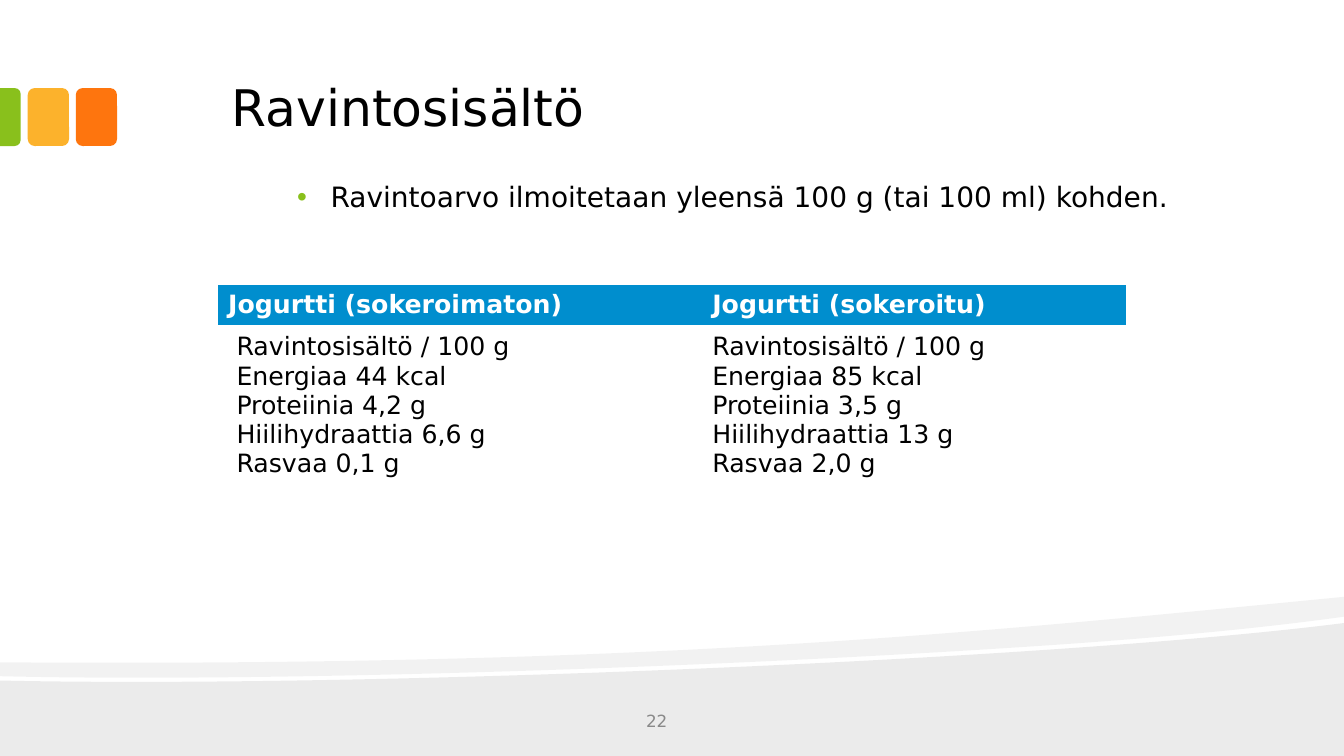
import dataclasses

import lxml.etree
import pptx
import pptx.dml.color
import pptx.enum.shapes
import pptx.enum.text
import pptx.oxml.ns
import pptx.util

Cm = pptx.util.Cm
Pt = pptx.util.Pt
Shape = pptx.enum.shapes.MSO_SHAPE
Align = pptx.enum.text.PP_ALIGN
Anchor = pptx.enum.text.MSO_ANCHOR
qn = pptx.oxml.ns.qn


@dataclasses.dataclass(frozen=True)
class Theme:
    font: str = "DejaVu Sans"
    black: str = "000000"
    white: str = "FFFFFF"
    gray: str = "898989"
    blue: str = "008ECE"
    green: str = "89C01C"
    yellow: str = "FCB22C"
    orange: str = "FE750E"
    title: int = 36
    body: int = 20
    cell: int = 18
    foot: int = 12


def rgb(color):
    return pptx.dml.color.RGBColor.from_string(color)


def add(parent, tag, **attrs):
    return lxml.etree.SubElement(parent, qn(tag), attrs)


def write(frame, text, font, size, color, bold=False, align=Align.LEFT,
          bullet=None, left=0, hang=0, space=None):
    para = frame.paragraphs[0]
    para.text = text
    para.alignment = align
    para.line_spacing = space
    if bullet:
        props = para._p.get_or_add_pPr()
        props.set("marL", str(Cm(left)))
        props.set("indent", str(Cm(-hang)))
        add(add(props, "a:buClr"), "a:srgbClr", val=bullet)
        add(props, "a:buFont", typeface="Arial")
        add(props, "a:buChar", char="•")
    for run in para.runs:
        run.font.name = font
        run.font.size = Pt(size)
        run.font.bold = bold
        run.font.color.rgb = rgb(color)


def bend(lines):
    cubic = lxml.etree.Element(qn("a:cubicBezTo"))
    lines[0].addprevious(cubic)
    for line in lines:
        cubic.append(line[0])
        line.getparent().remove(line)


class Page:
    def __init__(self, deck, theme):
        self.theme = theme
        self.slide = deck.slides.add_slide(deck.slide_layouts[6])
        self.shapes = self.slide.shapes

    def paint(self, shape, color, alpha=None):
        shape.shadow.inherit = False
        shape.line.fill.background()
        shape.fill.solid()
        shape.fill.fore_color.rgb = rgb(color)
        if alpha:
            tint = shape._element.spPr.find(qn("a:solidFill"))[0]
            add(tint, "a:alpha", val=str(alpha * 1000))

    def band(self, start, parts, alpha):
        pen = self.shapes.build_freeform(*map(Cm, start))
        for part in parts:
            pen.add_line_segments([tuple(map(Cm, spot)) for spot in part], close=False)
        pen.add_line_segments([tuple(map(Cm, start))], close=True)
        shape = pen.convert_to_shape()
        lines = list(shape._element.iter(qn("a:lnTo")))
        for part in parts:
            if len(part) == 3:
                bend(lines[:3])
            lines = lines[len(part):]
        self.paint(shape, self.theme.black, alpha)

    def block(self, kind, box, color, turn=0, curves=()):
        shape = self.shapes.add_shape(kind, *map(Cm, box))
        shape.rotation = turn
        for spot, value in enumerate(curves):
            shape.adjustments[spot] = value
        self.paint(shape, color)

    def text(self, box, text, size, color, anchor=Anchor.TOP, **style):
        frame = self.shapes.add_textbox(*map(Cm, box)).text_frame
        frame.word_wrap = True
        frame.vertical_anchor = anchor
        frame.margin_left = frame.margin_right = Cm(0.34)
        frame.margin_top = frame.margin_bottom = Cm(0.17)
        write(frame, text, self.theme.font, size, color, **style)

    def table(self, box, cols, rows, cells, pads):
        theme = self.theme
        grid = self.shapes.add_table(len(rows), len(cols), *map(Cm, box)).table
        grid.horz_banding = False
        style = grid._tbl.tblPr.find(qn("a:tableStyleId"))
        style.text = "{2D5ABB26-0587-4C30-8999-92F81FD0307C}"
        for col, width in zip(grid.columns, cols):
            col.width = Cm(width)
        for y, height in enumerate(rows):
            grid.rows[y].height = Cm(height)
            head = y == 0
            for x, text in enumerate(cells[y]):
                cell = grid.cell(y, x)
                cell.vertical_anchor = Anchor.MIDDLE
                cell.margin_left = Cm(pads[y][x])
                if head:
                    cell.fill.solid()
                    cell.fill.fore_color.rgb = rgb(theme.blue)
                else:
                    cell.fill.background()
                write(cell.text_frame, text, theme.font, theme.cell,
                      theme.white if head else theme.black, bold=head)


def main():
    high = 19.05
    wide = high * 16 / 9
    deck = pptx.Presentation()
    deck.slide_width = Cm(wide)
    deck.slide_height = Cm(high)
    theme = Theme()
    page = Page(deck, theme)

    page.band((wide, 15.7), [
        [(wide, high)],
        [(0, high)],
        [(0, 17.15)],
        [(8.94, 17.35), (26.47, 16.64), (wide, 15.7)]], 8)
    page.band((wide, 15.04), [
        [(wide, 15.54)],
        [(31.88, 15.82), (29.18, 16.08), (26.14, 16.28)],
        [(17.73, 16.84), (6.55, 17.2), (0, 17.04)],
        [(0, 16.69)],
        [(16.56, 16.81), (24.66, 15.93), (wide, 15.04)]], 5)

    for left, color in ((1.91, theme.orange), (0.7, theme.yellow)):
        page.block(Shape.ROUNDED_RECTANGLE, (left, 2.22, 1.04, 1.46), color)
    page.block(Shape.ROUND_2_SAME_RECTANGLE, (-0.47, 2.69, 1.46, 0.52),
               theme.green, turn=90, curves=(0.29, 0))

    page.text((5.5, 0.84, 22.86, 2.77), "Ravintosisältö",
              theme.title, theme.black, anchor=Anchor.BOTTOM)
    page.text((3.39, 4.45, 27.08, 12.7),
              "Ravintoarvo ilmoitetaan yleensä 100 g (tai 100 ml) kohden.",
              theme.body, theme.black, bullet=theme.green,
              left=4.6, hang=0.84, space=0.9)

    facts = ("Ravintosisältö / 100 g\vEnergiaa {} kcal\vProteiinia {} g\v"
             "Hiilihydraattia {} g\vRasvaa {} g")
    page.table((5.5, 7.17, 22.87, 5.08), (11.99, 10.88), (1.02, 4.06),
               (("Jogurtti (sokeroimaton)", "Jogurtti (sokeroitu)"),
                (facts.format("44", "4,2", "6,6", "0,1"),
                 facts.format("85", "3,5", "13", "2,0"))),
               ((0.25, 0.46), (0.46, 0.46)))

    page.text((13.59, 17.65, 5.92, 1.02), "22", theme.foot, theme.gray,
              anchor=Anchor.MIDDLE, align=Align.CENTER)
    deck.save("out.pptx")


if __name__ == "__main__":
    main()
